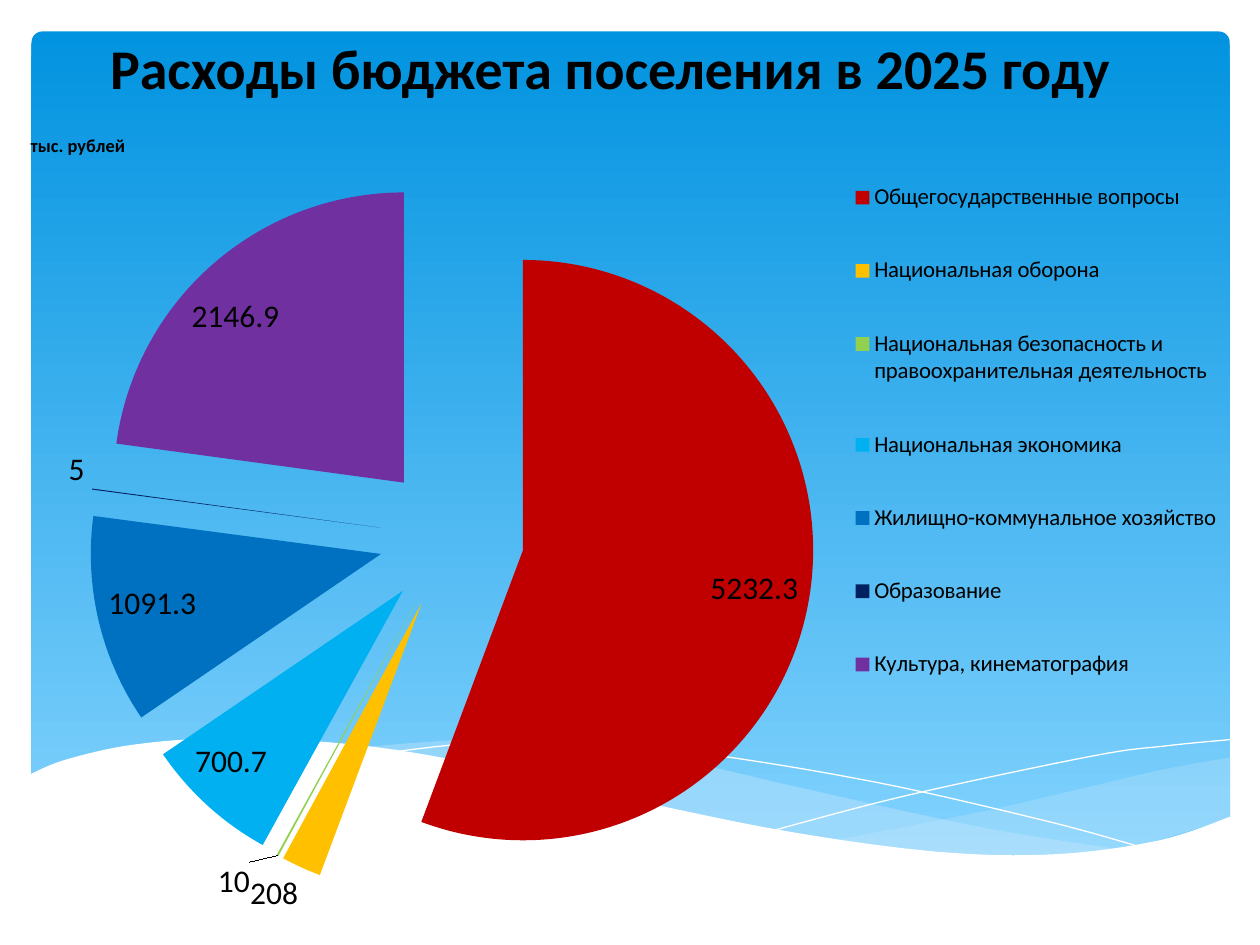
from dataclasses import dataclass

from lxml import etree
from pptx import Presentation
from pptx.chart.data import CategoryChartData
from pptx.dml.color import RGBColor
from pptx.enum.chart import XL_CHART_TYPE, XL_LABEL_POSITION, XL_LEGEND_POSITION
from pptx.enum.shapes import MSO_SHAPE
from pptx.enum.text import MSO_ANCHOR, PP_ALIGN
from pptx.oxml.ns import qn
from pptx.util import Inches, Pt

PIE = XL_CHART_TYPE.PIE
BEST_FIT = XL_LABEL_POSITION.BEST_FIT
LEGEND_RIGHT = XL_LEGEND_POSITION.RIGHT
ROUNDED = MSO_SHAPE.ROUNDED_RECTANGLE
CENTER = PP_ALIGN.CENTER
MIDDLE = MSO_ANCHOR.MIDDLE
COLUMNS, ROWS = 100, 75
TITLE_ONLY = 5


@dataclass(frozen=True)
class Theme:
    font: str = "Calibri"
    ink: str = "000000"
    paper: str = "FFFFFF"
    sky_top: str = "0293E0"
    sky_bottom: str = "83D3FE"
    mist: str = "C6E7FC"
    title_size: float = 32
    label_size: float = 18
    legend_size: float = 13
    unit_size: float = 10.5


EXPENSES = [
    ("Общегосударственные вопросы", 5232.3, "C00000"),
    ("Национальная оборона", 208, "FFC000"),
    ("Национальная безопасность и правоохранительная деятельность", 10, "92D050"),
    ("Национальная экономика", 700.7, "00B0F0"),
    ("Жилищно-коммунальное хозяйство", 1091.3, "0070C0"),
    ("Образование", 5, "002060"),
    ("Культура, кинематография", 2146.9, "7030A0"),
]

# Wave edges as knots of smooth curves, in grid columns and rows
RIGHT_TOP = [(97.7, 60.1), (92.2, 61.1), (86.2, 62.5), (78, 64.4), (66.2, 66.7)]
RIGHT_BOTTOM = [(66.2, 66.7), (73.3, 67.6), (81.5, 68), (89, 67.4), (97.7, 64.9)]
MIDDLE_TOP = [(89.4, 67.5), (77.6, 65.6), (63, 62.4), (55.5, 60.7), (46.5, 59.3),
              (38, 58.7), (28.7, 59.3)]
MIDDLE_BOTTOM = [(28.7, 59.3), (36.3, 60.4), (45, 62.4), (56.7, 65), (68.1, 67),
                 (78.6, 68), (89.4, 67.5)]
FALLING_LINE = [(31, 59.7), (37.5, 59), (45.1, 58.9), (55.7, 59.8), (69.6, 62.1),
                (83.2, 65.2), (90.8, 67.3)]
RISING_LINE = [(61.4, 65.9), (72.1, 63.1), (86.7, 60), (92.5, 59.2), (97.6, 58.7)]
SHORE = [(97.7, 64.8), (92, 66.7), (83.7, 67.8), (74.4, 67.6), (62.6, 66),
         (50.3, 63.5), (36.5, 60.4), (27.1, 59), (17.7, 58.6), (10.6, 59.1),
         (5.2, 60.3), (2.3, 61.5)]


def rgb(code):
    return RGBColor.from_string(code)


def smooth(knots, steps=8):
    """Points of a Catmull-Rom curve through the knots."""
    ends = [knots[0], *knots, knots[-1]]
    points = [knots[0]]
    for a, b, c, d in zip(ends, ends[1:], ends[2:], ends[3:]):
        for step in range(1, steps + 1):
            t = step / steps
            points.append(tuple(
                (2 * q + (r - p) * t + (2 * p - 5 * q + 4 * r - s) * t ** 2
                 + (3 * q - p - 3 * r + s) * t ** 3) / 2
                for p, q, r, s in zip(a, b, c, d)))
    return points


def format_font(font, theme, size, bold=None):
    font.name, font.size, font.bold = theme.font, Pt(size), bold
    font.color.rgb = rgb(theme.ink)


def set_layout(part, index, **shares):
    """Place a chart part by shares of the chart's size."""
    for old in part.findall(qn("c:layout")):
        part.remove(old)
    layout = etree.Element(qn("c:layout"))
    manual = etree.SubElement(layout, qn("c:manualLayout"))
    if index == 0:
        etree.SubElement(manual, qn("c:layoutTarget")).set("val", "inner")
    for axis in ("x", "y"):
        etree.SubElement(manual, qn(f"c:{axis}Mode")).set("val", "edge")
    for key, value in shares.items():
        etree.SubElement(manual, qn(f"c:{key}")).set("val", str(value))
    part.insert(index, layout)


class SlideBuilder:
    def __init__(self, deck, theme):
        self.theme = theme
        self.column = deck.slide_width / COLUMNS
        self.row = deck.slide_height / ROWS
        self.page = deck.slides.add_slide(deck.slide_layouts[TITLE_ONLY])

    def place(self, column, row):
        return round(column * self.column), round(row * self.row)

    def area(self, left, top, width, height):
        return self.place(left, top) + self.place(width, height)

    def sky(self, *area):
        box = self.page.shapes.add_shape(ROUNDED, *self.area(*area))
        box.adjustments[0] = 0.013
        box.shadow.inherit = False
        box.line.fill.background()
        box.fill.gradient()
        box.fill.gradient_angle = 270
        stops = box.fill.gradient_stops
        for stop, place, code in zip(stops, (0, 1), (self.theme.sky_top, self.theme.sky_bottom)):
            stop.position, stop.color.rgb = place, rgb(code)

    def outline(self, points, closed):
        start, *rest = [self.place(*point) for point in points]
        pen = self.page.shapes.build_freeform(*start)
        pen.add_line_segments(rest, close=closed)
        shape = pen.convert_to_shape()
        shape.shadow.inherit = False
        return shape

    def wave(self, points, color, opacity=100):
        shape = self.outline(points, closed=True)
        shape.line.fill.background()
        shape.fill.solid()
        shape.fill.fore_color.rgb = rgb(color)
        if opacity < 100:
            tint = shape.element.spPr.find(qn("a:solidFill"))[0]
            etree.SubElement(tint, qn("a:alpha")).set("val", str(opacity * 1000))

    def thread(self, knots):
        shape = self.outline(smooth(knots), closed=False)
        shape.fill.background()
        shape.line.color.rgb = rgb(self.theme.paper)
        shape.line.width = Pt(0)

    def title(self, text, *area):
        box = self.page.shapes.title
        box.left, box.top, box.width, box.height = self.area(*area)
        frame = box.text_frame
        frame.word_wrap, frame.vertical_anchor = True, MIDDLE
        para = frame.paragraphs[0]
        para.alignment = CENTER
        span = para.add_run()
        span.text = text
        format_font(span.font, self.theme, self.theme.title_size, bold=True)
        # Bring the title in front of the backdrop
        self.page.shapes.element.append(box.element)

    def pie(self, unit, rows, explosion, *area):
        theme = self.theme
        names, values, colors = zip(*rows)
        data = CategoryChartData(number_format="General")
        data.categories = names
        data.add_series("Series 1", values)
        chart = self.page.shapes.add_chart(PIE, *self.area(*area), data).chart
        root = chart.element
        format_font(chart.font, theme, theme.label_size)

        # Unit caption and legend
        chart.has_title = True
        span = chart.chart_title.text_frame.paragraphs[0].add_run()
        span.text = unit
        format_font(span.font, theme, theme.unit_size, bold=True)
        chart.has_legend = True
        chart.legend.position = LEGEND_RIGHT
        chart.legend.include_in_layout = False
        format_font(chart.legend.font, theme, theme.legend_size)

        # Exploded slices
        plot = chart.plots[0]
        plot.vary_by_categories = True
        series = plot.series[0]
        for index, color in enumerate(colors):
            look = series.points[index].format
            look.fill.solid()
            look.fill.fore_color.rgb = rgb(color)
            look.line.fill.background()
        burst = etree.Element(qn("c:explosion"))
        burst.set("val", str(explosion))
        root.find(".//" + qn("c:dPt")).addprevious(burst)

        # Value labels
        plot.has_data_labels = True
        labels = plot.data_labels
        labels.show_value, labels.show_percentage = True, False
        labels.number_format, labels.number_format_is_linked = "General", False
        labels.position = BEST_FIT
        format_font(labels.font, theme, theme.label_size)

        # Places inside the chart
        set_layout(root.find(".//" + qn("c:title")), 1, x=0.01, y=0.04)
        set_layout(root.find(".//" + qn("c:legend")), 1, x=0.67, y=0.05, w=0.32, h=0.69)
        set_layout(root.find(".//" + qn("c:plotArea")), 0, x=0.06, y=0.09, w=0.59, h=0.86)


def main():
    deck = Presentation()
    deck.slide_width, deck.slide_height = Inches(10), Inches(7.5)
    theme = Theme()
    slide = SlideBuilder(deck, theme)

    # Backdrop: sky and waves
    slide.sky(2.5, 2.5, 95.1, 66)
    slide.wave(smooth(RIGHT_TOP) + smooth(RIGHT_BOTTOM), theme.mist, 29)
    slide.wave(smooth(MIDDLE_TOP) + smooth(MIDDLE_BOTTOM), theme.mist, 40)
    slide.thread(FALLING_LINE)
    slide.thread(RISING_LINE)
    slide.wave(smooth(SHORE) + [(2.3, 73.1), (97.7, 73.1)], theme.paper)

    # Content
    slide.title("Расходы бюджета поселения в 2025 году", 2, 2.1, 92.9, 6.4)
    slide.pie("тыс. рублей", EXPENSES, 25, 1.2, 7.6, 97.6, 67.4)
    deck.save("out.pptx")


if __name__ == "__main__":
    main()
